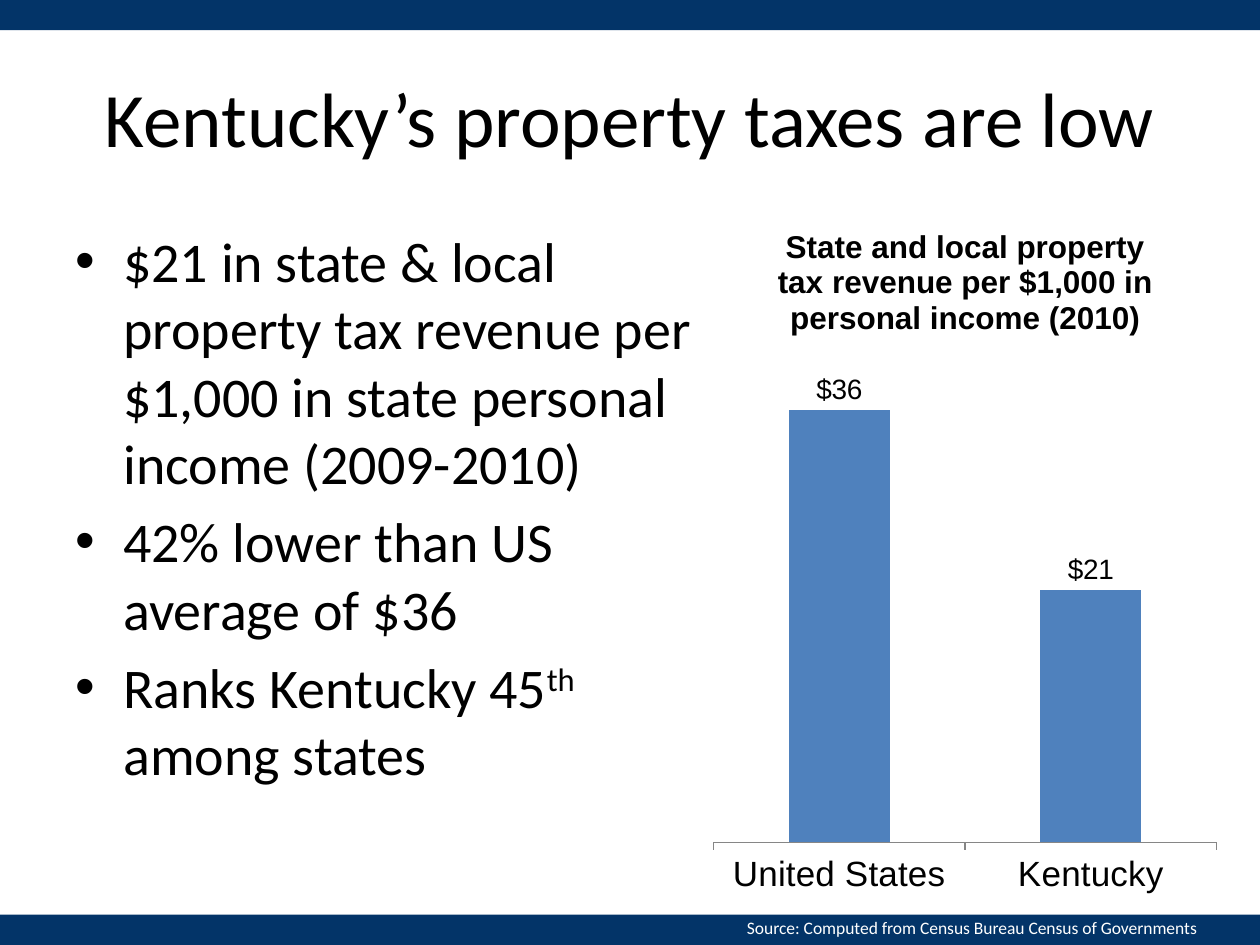
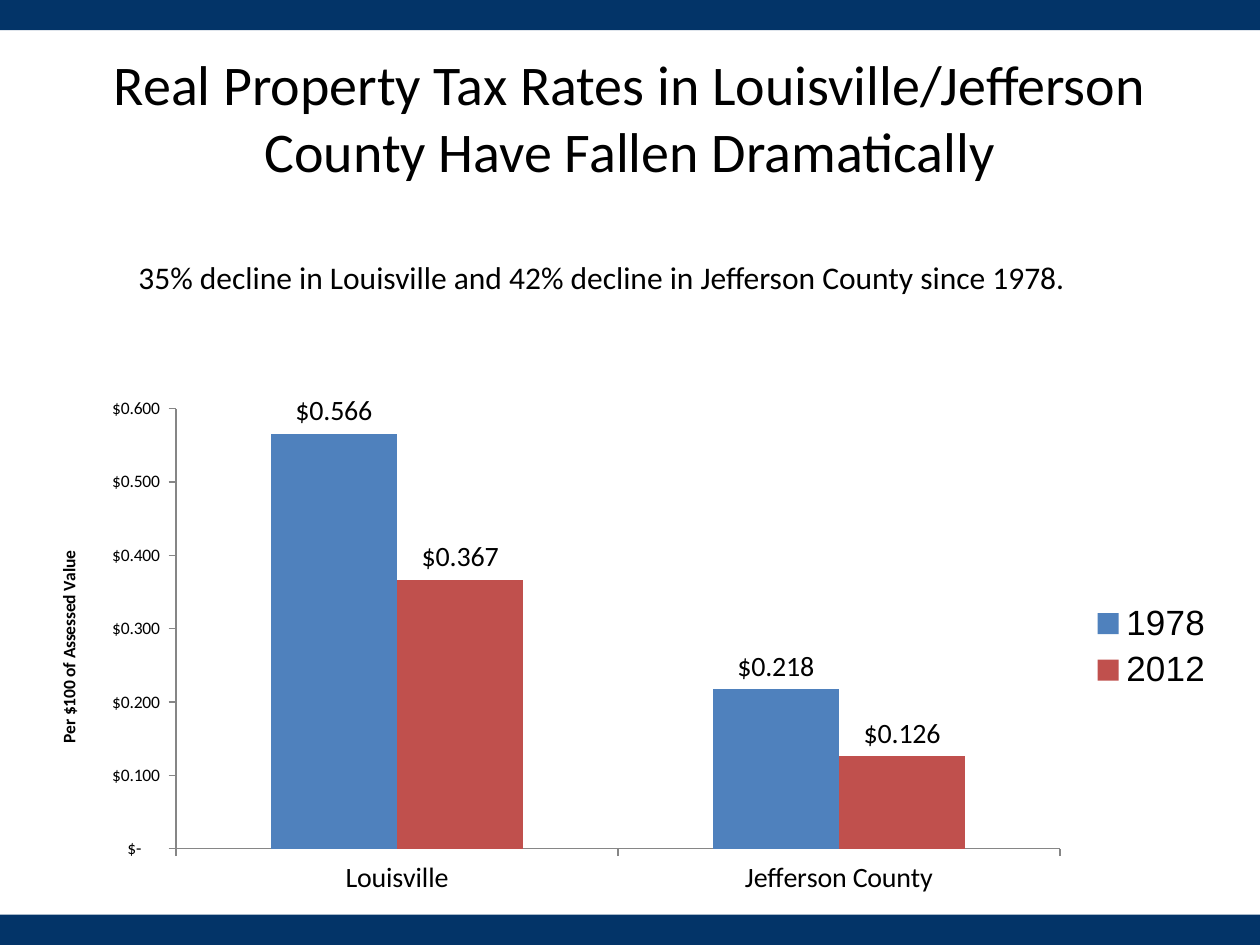
from lxml import etree
from pptx import Presentation
from pptx.chart.data import CategoryChartData
from pptx.dml.color import RGBColor
from pptx.enum.chart import XL_CHART_TYPE, XL_LABEL_POSITION, XL_LEGEND_POSITION, XL_TICK_MARK
from pptx.enum.shapes import MSO_SHAPE
from pptx.enum.text import MSO_ANCHOR, PP_ALIGN
from pptx.oxml import parse_xml
from pptx.oxml.ns import nsdecls, qn
from pptx.util import Inches, Pt

COLORS = {"navy": "033468", "black": "000000", "white": "FFFFFF",
          "blue": "4F81BD", "red": "C0504D", "axis": "868686"}
FONT = "Calibri"
BAND_H = 0.24


def rgb(name):
    """Return the named colour."""
    return RGBColor.from_string(COLORS[name])


def money(digits):
    """Return an accounting number format with this digit pattern."""
    return rf'_("$"* {digits}_);_("$"* \({digits}\);_("$"* "-"??_);_(@_)'


def style(font, size, color="black", name=FONT, bold=False):
    """Set size, colour, face and weight of a font."""
    font.size, font.name, font.bold = Pt(size), name, bold
    font.color.rgb = rgb(color)


def add_text(s, box, text, size, color="black", align=PP_ALIGN.LEFT, anchor=MSO_ANCHOR.TOP):
    """Add a wrapped one-paragraph text box."""
    tf = s.shapes.add_textbox(*map(Inches, box)).text_frame
    tf.word_wrap = True
    tf.vertical_anchor = anchor
    p = tf.paragraphs[0]
    p.text, p.alignment = text, align
    style(p.font, size, color)


def add_slide(prs, title, size):
    """Add a slide with both bands and a centred title."""
    s = prs.slides.add_slide(prs.slide_layouts[6])
    for top in (7.5 - BAND_H, 0):
        sp = s.shapes.add_shape(MSO_SHAPE.RECTANGLE, 0, Inches(top), Inches(10), Inches(BAND_H))
        sp.shadow.inherit = False
        sp.fill.solid()
        sp.fill.fore_color.rgb = rgb("navy")
        sp.line.fill.background()
    add_text(s, (0.5, 0.3, 9, 1.25), title, size, align=PP_ALIGN.CENTER, anchor=MSO_ANCHOR.MIDDLE)
    return s


def add_bullets(s, box, items, size):
    """Add bulleted paragraphs; each item lists (text, is_superscript) runs."""
    tf = s.shapes.add_textbox(*map(Inches, box)).text_frame
    tf.word_wrap = True
    for i, runs in enumerate(items):
        p = tf.add_paragraph() if i else tf.paragraphs[0]
        p.space_before = Pt(size * 0.2)
        style(p.font, size)
        pPr = p._p.get_or_add_pPr()
        pPr.set("marL", str(Inches(0.38)))
        pPr.set("indent", str(Inches(-0.38)))
        bullet = f'<a:buFont {nsdecls("a")} typeface="Arial"/>', f'<a:buChar {nsdecls("a")} char="•"/>'
        defaults = pPr.find(qn("a:defRPr"))
        for xml in bullet:
            defaults.addprevious(parse_xml(xml))
        for text, is_superscript in runs:
            r = p.add_run()
            r.text = text
            if is_superscript:
                r.font._element.set("baseline", "30000")


def set_plot_layout(chart, box):
    """Place the inner plot area at fractions of the chart."""
    plot_area = chart._chartSpace.chart.plotArea
    for old in plot_area.findall(qn("c:layout")):
        plot_area.remove(old)
    layout = etree.Element(qn("c:layout"))
    manual = etree.SubElement(layout, qn("c:manualLayout"))
    values = [("layoutTarget", "inner"), ("xMode", "edge"), ("yMode", "edge"), *zip("xywh", box)]
    for tag, value in values:
        etree.SubElement(manual, qn(f"c:{tag}")).set("val", str(value))
    plot_area.insert(0, layout)


def style_axis(axis, size, font):
    """Give an axis its text, grey line and outside ticks."""
    axis.has_major_gridlines = False
    axis.major_tick_mark = XL_TICK_MARK.OUTSIDE
    axis.minor_tick_mark = XL_TICK_MARK.NONE
    axis.format.line.color.rgb = rgb("axis")
    axis.format.line.width = Pt(0.75)
    style(axis.tick_labels.font, size, name=font)


def set_title(owner, text, size, font):
    """Give a chart or axis a bold title."""
    owner.has_title = True
    p = owner.chart_title.text_frame.paragraphs[0] if hasattr(owner, "chart_title") \
        else owner.axis_title.text_frame.paragraphs[0]
    p.text = text
    style(p.font, size, name=font, bold=True)


def add_columns(s, box, plot_box, cats, series, fmt, top, step, font, cat_size):
    """Add a clustered column chart with value labels."""
    data = CategoryChartData(number_format=fmt)
    data.categories = cats
    for name, values, _ in series:
        data.add_series(name, values)
    chart = s.shapes.add_chart(XL_CHART_TYPE.COLUMN_CLUSTERED, *map(Inches, box), data).chart
    style(chart.font, 10, name=font)
    chart.has_title = chart.has_legend = False
    plot = chart.plots[0]
    plot.gap_width, plot.overlap, plot.vary_by_categories = 150, 0, False
    for ser, (_, _, color) in zip(plot.series, series):
        ser.format.fill.solid()
        ser.format.fill.fore_color.rgb = rgb(color)
        labels = ser.data_labels
        labels.show_value = True
        labels.position = XL_LABEL_POSITION.OUTSIDE_END
        labels.number_format, labels.number_format_is_linked = fmt, False
        style(labels.font, 16, name=font)
    style_axis(chart.category_axis, cat_size, font)
    axis = chart.value_axis
    style_axis(axis, 10, font)
    axis.minimum_scale, axis.maximum_scale, axis.major_unit = 0, top, step
    axis.tick_labels.number_format, axis.tick_labels.number_format_is_linked = fmt, False
    set_plot_layout(chart, plot_box)
    return chart


def add_revenue_slide(prs):
    """Add the comparison of state and national revenue."""
    s = add_slide(prs, "Kentucky’s property taxes are low", 44)
    add_bullets(s, (0.5, 1.75, 5.33, 4.95), [
        [("$21 in state & local property tax revenue per $1,000 in state personal income (2009-2010)", False)],
        [("42% lower than US average of $36", False)],
        [("Ranks Kentucky 45", False), ("th", True), (" among states", False)],
    ], 32)
    add_text(s, (5.83, 7.23, 4.17, 0.27),
             "Source: Computed from Census Bureau Census of Governments", 10, "white")
    chart = add_columns(s, (5.58, 1.58, 4.16, 5.61), (0.02, 0.23, 0.96, 0.68),
                        ["United States", "Kentucky"], [("Series 1", (36, 21), "blue")],
                        money("#,##0"), 40, 5, "Arial", 20)
    set_title(chart, "State and local property tax revenue per $1,000 in personal income (2010)", 18, "Arial")
    chart.value_axis.visible = False


def add_rates_slide(prs):
    """Add the comparison of tax rates over time."""
    s = add_slide(prs, "Real Property Tax Rates in Louisville/Jefferson County Have Fallen Dramatically", 32)
    add_text(s, (1, 2, 7.92, 0.4),
             "35% decline in Louisville and 42% decline in Jefferson County since 1978.", 18)
    chart = add_columns(s, (0.26, 3.08, 9.48, 4.11), (0.12, 0.04, 0.74, 0.85),
                        ["Louisville", "Jefferson County"],
                        [("1978", (0.566, 0.218), "blue"), ("2012", (0.367, 0.126), "red")],
                        money("#,##0.000"), 0.6, 0.1, FONT, 16)
    set_title(chart.value_axis, "Per $100 of Assessed Value", 10, FONT)
    chart.has_legend = True
    chart.legend.position = XL_LEGEND_POSITION.RIGHT
    chart.legend.include_in_layout = False
    style(chart.legend.font, 20, name="Arial")


def main():
    """Build and save the presentation."""
    prs = Presentation()
    prs.slide_width, prs.slide_height = Inches(10), Inches(7.5)
    add_revenue_slide(prs)
    add_rates_slide(prs)
    prs.save("out.pptx")


if __name__ == "__main__":
    main()
